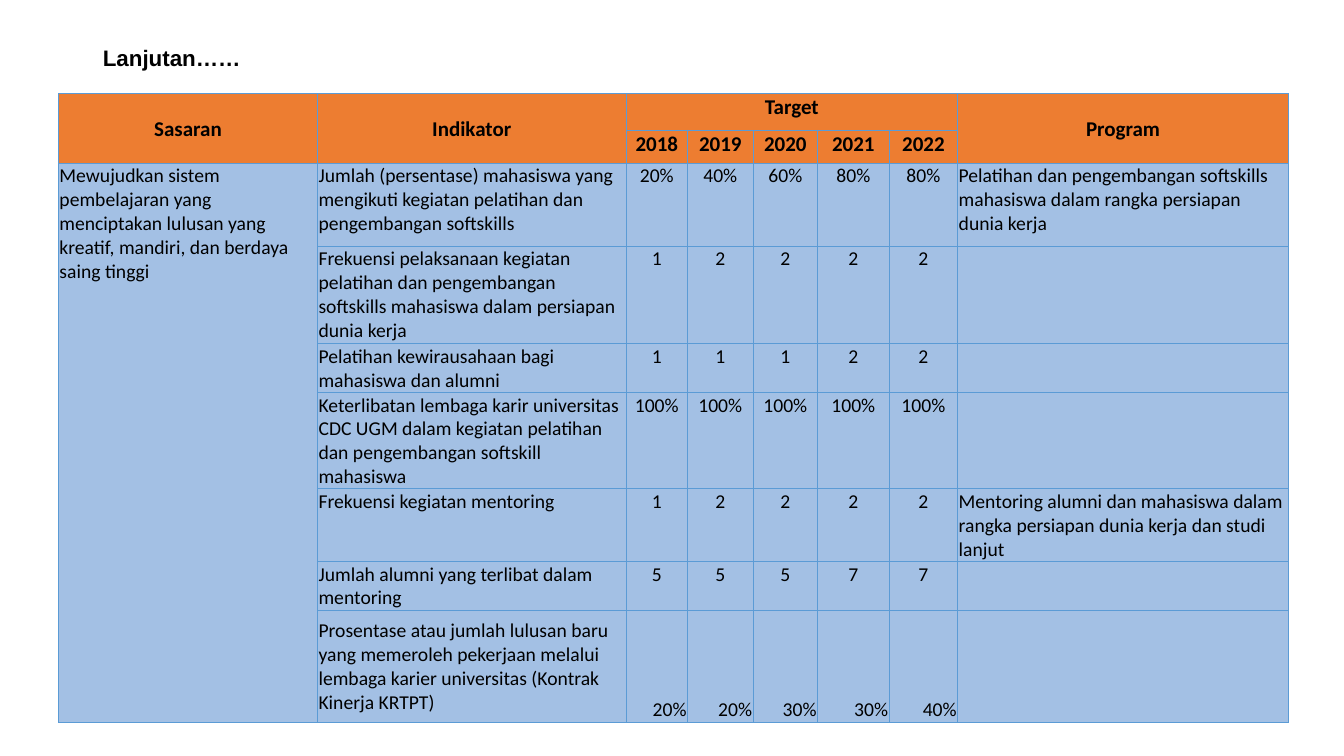
from lxml import etree
from pptx import Presentation
from pptx.dml.color import RGBColor
from pptx.enum.text import MSO_ANCHOR as ANCHOR, PP_ALIGN as ALIGN
from pptx.oxml.ns import qn
from pptx.util import Inches, Pt

BLACK = RGBColor(0x00, 0x00, 0x00)
ORANGE = RGBColor(0xED, 0x7D, 0x31)
LIGHT_BLUE = RGBColor(0xA3, 0xC0, 0xE4)
BORDER_BLUE = RGBColor(0x5B, 0x9B, 0xD5)

COL_WIDTHS = [2.57, 3.06, 0.61, 0.65, 0.64, 0.71, 0.68, 3.28]
ROW_HEIGHTS = [0.36, 0.33, 0.82, 0.97, 0.45, 0.84, 0.7, 0.42, 1.11]
HEADER_ROWS = 2
YEAR_COLS = range(2, 7)
LAST_ROW = len(ROW_HEIGHTS) - 1
MERGES = [((0, 0), (1, 0)), ((0, 1), (1, 1)), ((0, 2), (0, 6)),
          ((0, 7), (1, 7)), ((2, 0), (LAST_ROW, 0))]

GOAL = ("Mewujudkan sistem pembelajaran yang menciptakan lulusan yang kreatif, "
        "mandiri, dan berdaya saing tinggi")
INDICATORS = [
    ("Jumlah (persentase) mahasiswa yang mengikuti kegiatan pelatihan dan "
     "pengembangan softskills", "20% 40% 60% 80% 80%",
     "Pelatihan dan pengembangan softskills mahasiswa dalam rangka persiapan dunia kerja"),
    ("Frekuensi pelaksanaan kegiatan pelatihan dan pengembangan softskills "
     "mahasiswa dalam persiapan dunia kerja", "1 2 2 2 2", ""),
    ("Pelatihan kewirausahaan bagi mahasiswa dan alumni", "1 1 1 2 2", ""),
    ("Keterlibatan lembaga karir universitas CDC UGM dalam kegiatan pelatihan dan "
     "pengembangan softskill mahasiswa", "100% 100% 100% 100% 100%", ""),
    ("Frekuensi kegiatan mentoring", "1 2 2 2 2",
     "Mentoring alumni dan mahasiswa dalam rangka persiapan dunia kerja dan studi lanjut"),
    ("Jumlah alumni yang terlibat dalam mentoring", "5 5 5 7 7", ""),
    ("Prosentase atau jumlah lulusan baru yang memeroleh pekerjaan melalui lembaga "
     "karier universitas (Kontrak Kinerja KRTPT)", "20% 20% 30% 30% 40%", ""),
]


def table_rows():
    """Return the cell texts row by row, with blanks under merged cells."""
    rows = [["Sasaran", "Indikator", "Target", "", "", "", "", "Program"],
            ["", "", "2018", "2019", "2020", "2021", "2022", ""]]
    for i, (indicator, targets, program) in enumerate(INDICATORS):
        rows.append([GOAL if i == 0 else "", indicator, *targets.split(), program])
    return rows


def format_font(font, name, size, bold):
    font.name = name
    font.size = Pt(size)
    font.bold = bold
    font.color.rgb = BLACK


def add_title(s, text):
    sp = s.shapes.title
    sp.left, sp.top = Inches(0.92), Inches(0.4)
    sp.width, sp.height = Inches(11.5), Inches(0.38)
    tf = sp.text_frame
    tf.text = text
    tf.vertical_anchor = ANCHOR.MIDDLE
    p = tf.paragraphs[0]
    p.alignment = ALIGN.LEFT
    p.line_spacing = 0.9
    format_font(p.runs[0].font, "Arial", 16, True)


def set_borders(cell):
    tcPr = cell._tc.get_or_add_tcPr()
    for side in ("a:lnL", "a:lnR", "a:lnT", "a:lnB"):
        ln = etree.SubElement(tcPr, qn(side), w=str(Pt(0.5)))
        fill = etree.SubElement(ln, qn("a:solidFill"))
        etree.SubElement(fill, qn("a:srgbClr"), val=str(BORDER_BLUE))


def cell_layout(row, col):
    """Return the alignment and the anchor of a cell."""
    if row < HEADER_ROWS:
        return ALIGN.CENTER, ANCHOR.TOP if col in YEAR_COLS else ANCHOR.MIDDLE
    if row == LAST_ROW and col in YEAR_COLS:
        return ALIGN.RIGHT, ANCHOR.BOTTOM
    if row == LAST_ROW and col == 1:
        return ALIGN.LEFT, ANCHOR.MIDDLE
    return ALIGN.CENTER if col in YEAR_COLS else ALIGN.LEFT, ANCHOR.TOP


def fill_cell(cell, text, row, col):
    header = row < HEADER_ROWS
    set_borders(cell)
    cell.fill.solid()
    cell.fill.fore_color.rgb = ORANGE if header else LIGHT_BLUE
    if not text:
        return
    cell.margin_left = cell.margin_right = cell.margin_top = Inches(0.01)
    cell.margin_bottom = 0
    cell.text_frame.text = text
    p = cell.text_frame.paragraphs[0]
    p.alignment, cell.vertical_anchor = cell_layout(row, col)
    format_font(p.runs[0].font, "Calibri", 15 if header else 14, header)


def add_target_table(s):
    frame = s.shapes.add_table(
        len(ROW_HEIGHTS), len(COL_WIDTHS), Inches(0.58), Inches(0.93),
        Inches(sum(COL_WIDTHS)), Inches(sum(ROW_HEIGHTS)))
    table = frame.table
    table.horz_banding = False
    for column, width in zip(table.columns, COL_WIDTHS):
        column.width = Inches(width)
    for row, height in zip(table.rows, ROW_HEIGHTS):
        row.height = Inches(height)
    for first, last in MERGES:
        table.cell(*first).merge(table.cell(*last))
    for i, texts in enumerate(table_rows()):
        for j, text in enumerate(texts):
            fill_cell(table.cell(i, j), text, i, j)


def main():
    prs = Presentation()
    prs.slide_width, prs.slide_height = Inches(13.33), Inches(7.5)
    s = prs.slides.add_slide(prs.slide_layouts[5])
    add_title(s, "Lanjutan……")
    add_target_table(s)
    prs.save("out.pptx")


if __name__ == "__main__":
    main()
